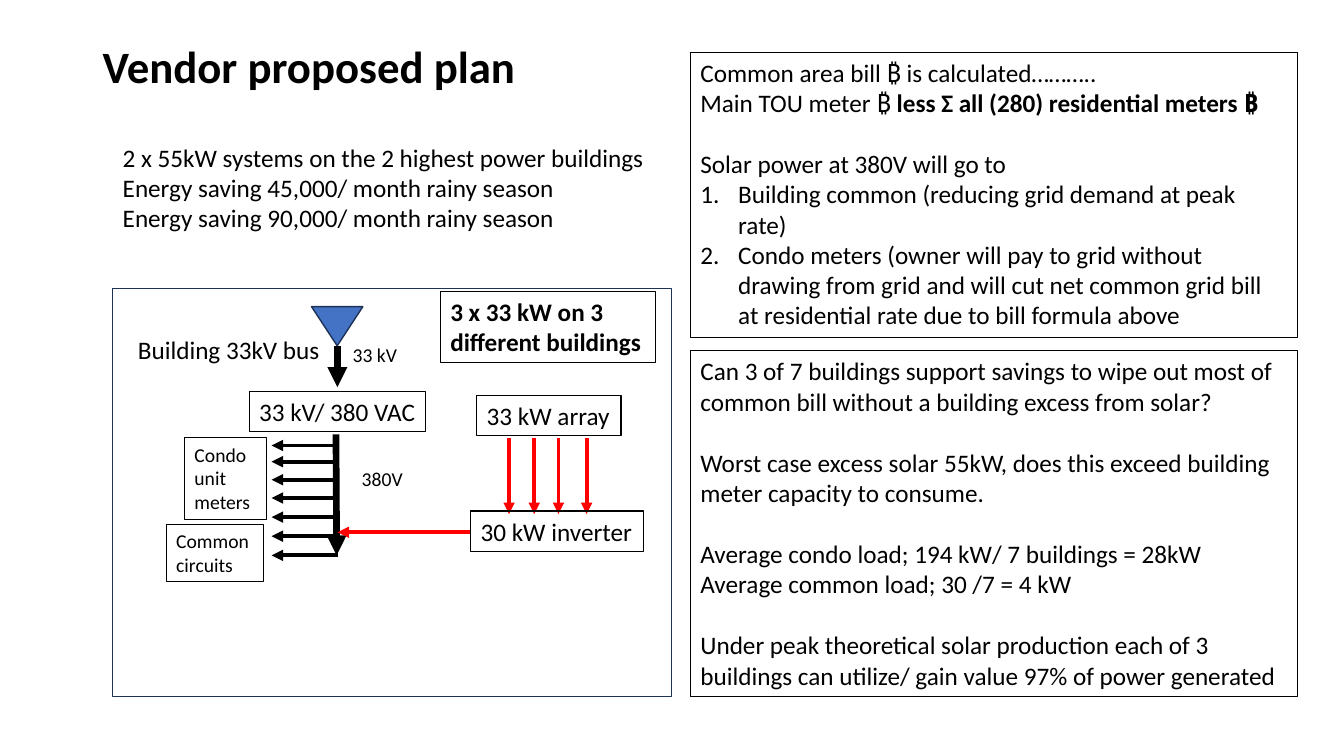
from lxml.etree import SubElement as Sub
from pptx import Presentation
from pptx.dml.color import RGBColor as Rgb
from pptx.enum.shapes import MSO_CONNECTOR as Conn, MSO_SHAPE as Kind
from pptx.enum.text import MSO_ANCHOR as Anchor, MSO_AUTO_SIZE as Auto
from pptx.oxml.ns import qn
from pptx.util import Pt

BLACK = Rgb(0, 0, 0)
RED = Rgb(0xFF, 0, 0)
BLUE = Rgb(0x44, 0x72, 0xC4)
NAVY = Rgb(0x1E, 0x32, 0x56)
FONT = "Calibri"
GAP = 22  # one line of 18 pt text

BILL = [
    "Common area bill ₿ is calculated………..",
    "Main TOU meter ₿ **less Σ all (280) residential meters ₿**",
    "Solar power at 380V will go to",
    "Building common (reducing grid demand at peak rate)",
    "Condo meters (owner will pay to grid without drawing from grid and will "
    "cut net common grid bill at residential rate due to bill formula above",
]
LOADS = [
    "Can 3 of 7 buildings support savings to wipe out most of common bill "
    "without a building excess from solar?",
    "Worst case excess solar 55kW, does this exceed building meter capacity "
    "to consume.",
    "Average condo load; 194 kW/ 7 buildings = 28kW",
    "Average common load; 30 /7 = 4 kW",
    "Under peak theoretical solar production each of 3 buildings can utilize/ "
    "gain value 97% of power generated",
]
SAVINGS = [
    "2 x 55kW systems on the 2 highest power buildings",
    "Energy saving 45,000/ month rainy season",
    "Energy saving 90,000/ month rainy season",
]


def number(para):
    """Make the paragraph an item of a numbered list."""
    props = para._p.get_or_add_pPr()
    props.set("marL", str(Pt(27)))
    props.set("indent", str(-Pt(27)))
    Sub(props, qn("a:buFont")).set("typeface", "+mj-lt")
    Sub(props, qn("a:buAutoNum")).set("type", "arabicPeriod")


def add_text(slide, lines, at, size=18, edge=True, wrap=False, grow=True,
             anchor=Anchor.TOP, space=None, gaps=(), items=()):
    """Add a text box; ** marks bold, gaps and items are line indices."""
    box = slide.shapes.add_textbox(*map(Pt, at))
    if edge:
        box.line.color.rgb = BLACK
        box.line.width = Pt(0.75)
    frame = box.text_frame
    frame.word_wrap = wrap
    frame.auto_size = Auto.SHAPE_TO_FIT_TEXT if grow else Auto.NONE
    frame.vertical_anchor = anchor
    for i, line in enumerate(lines):
        para = frame.add_paragraph() if i else frame.paragraphs[0]
        para.line_spacing = space
        if i in gaps:
            para.space_before = Pt(GAP)
        if i in items:
            number(para)
        for j, part in enumerate(line.split("**")):
            if part:
                run = para.add_run()
                run.text = part
                font = run.font
                font.name, font.size, font.bold = FONT, Pt(size), j % 2 == 1
                font.color.rgb = BLACK


def add_shape(slide, kind, at, fill=None):
    shape = slide.shapes.add_shape(kind, *map(Pt, at))
    shape.shadow.inherit = False
    if fill is None:
        shape.fill.background()
    else:
        shape.fill.solid()
        shape.fill.fore_color.rgb = fill
    shape.line.color.rgb = NAVY
    shape.line.width = Pt(1)
    return shape


def add_arrow(slide, ends, color=BLACK, width=2.75):
    arrow = slide.shapes.add_connector(Conn.STRAIGHT, *map(Pt, ends))
    arrow.line.color.rgb = color
    arrow.line.width = Pt(width)
    Sub(arrow.line._get_or_add_ln(), qn("a:tailEnd")).set("type", "triangle")
    Sub(arrow._element.spPr, qn("a:effectLst"))


def add_wiring(slide):
    """Draw the frame, the supply triangle and all the arrows."""
    add_shape(slide, Kind.RECTANGLE, (80.6, 206, 399, 291.6))
    supply = add_shape(slide, Kind.ISOSCELES_TRIANGLE,
                       (222.5, 219, 36.7, 28), BLUE)
    supply.rotation = 180
    add_arrow(slide, (241, 247, 241, 276.5), width=4.75)
    add_arrow(slide, (240, 310.3, 240.5, 396.7), width=4.75)
    for y in (318.2, 329.8, 342.7, 355.7, 369.4, 383, 396.7):
        add_arrow(slide, (241.5, y, 194, y))
    add_arrow(slide, (336.2, 380.2, 241.2, 380.2), RED)
    for x in (363.6, 381.6, 398.9, 419):
        add_arrow(slide, (x, 313.2, x, 367.2), RED)


def add_labels(slide):
    add_text(slide, ["Building 33kV bus"], (91.4, 235.4, 149.8, 29),
             edge=False)
    add_text(slide, ["33 kV/ 380 VAC"], (178, 279.4, 126, 29))
    add_text(slide, ["30 kW inverter"], (336.2, 365, 123.8, 29))
    add_text(slide, ["33 kW array"], (340.6, 282.2, 103, 29))
    add_text(slide, ["**3 x 33 kW on 3**", "**different buildings**"],
             (314.6, 208, 153.4, 51))
    add_text(slide, ["380V"], (251.3, 329.8, 47.5, 24.2), size=14, edge=False)
    add_text(slide, ["33 kV"], (244.8, 241.2, 49.7, 24.2), size=14,
             edge=False)
    add_text(slide, ["Common", "circuits"], (118.8, 374.4, 69.8, 41),
             size=14)
    add_text(slide, ["Condo", "unit", "meters"], (131.8, 312.5, 58.3, 58.3),
             size=14, wrap=True)


def main():
    deck = Presentation()
    deck.slide_width, deck.slide_height = Pt(960), Pt(540)
    slide = deck.slides.add_slide(deck.slide_layouts[6])
    add_text(slide, ["**Vendor proposed plan**"], (66.2, 28.8, 433.4, 40.3),
             size=32, edge=False, wrap=True, grow=False,
             anchor=Anchor.MIDDLE, space=0.9)
    add_text(slide, SAVINGS, (80.6, 97.9, 391, 72.7), edge=False)
    add_wiring(slide)
    add_labels(slide)
    add_text(slide, BILL, (493.2, 37.4, 433.4, 203.8), wrap=True,
             gaps=(2,), items=(3, 4))
    add_text(slide, LOADS, (493.2, 250.6, 433.4, 247), wrap=True,
             gaps=(1, 2, 4))
    deck.save("out.pptx")


if __name__ == "__main__":
    main()
